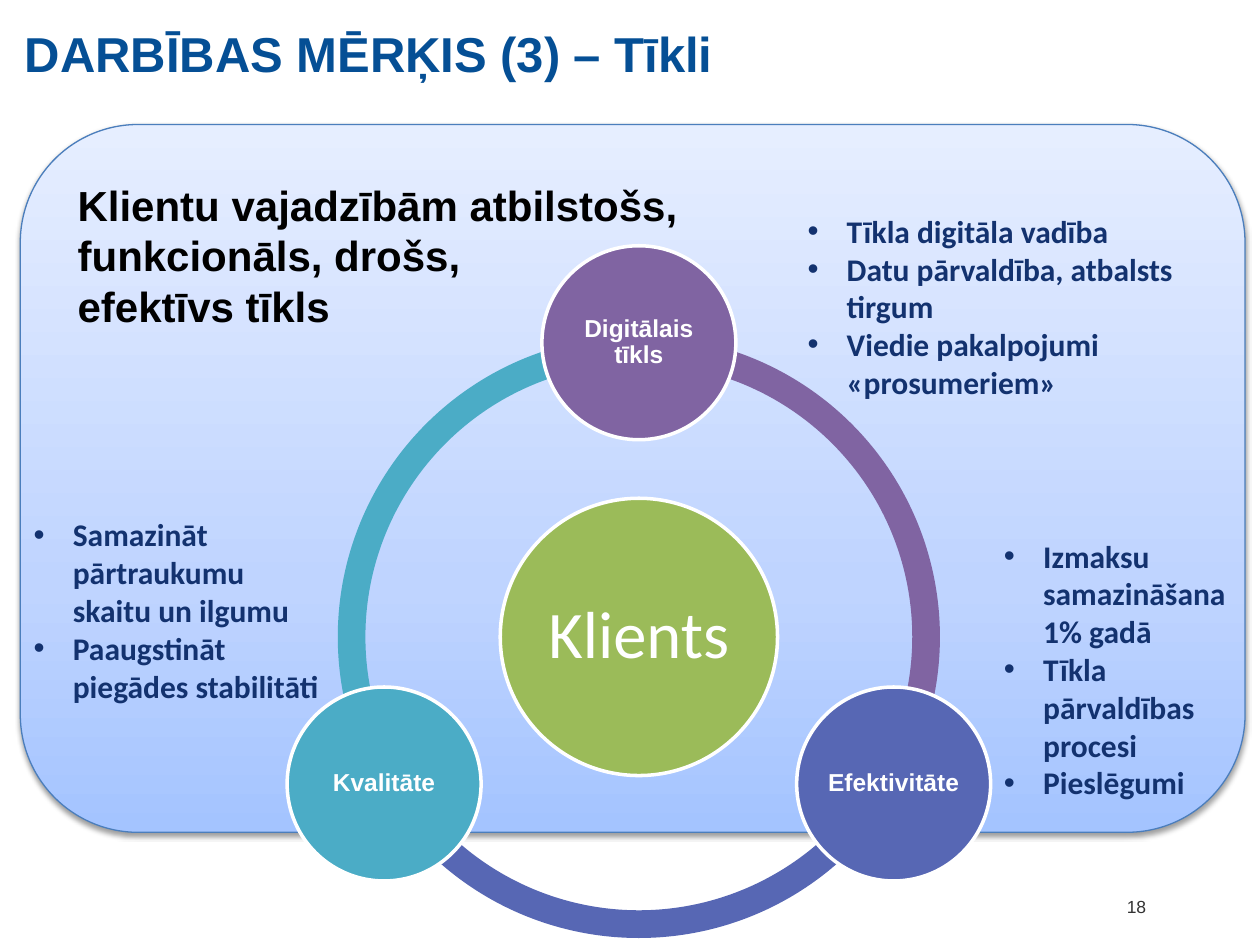
from math import cos, radians, sin

from lxml.etree import SubElement
from pptx import Presentation
from pptx.dml.color import RGBColor
from pptx.enum.shapes import MSO_SHAPE
from pptx.enum.text import MSO_ANCHOR, PP_ALIGN
from pptx.oxml.ns import qn
from pptx.util import Cm, Pt

COLORS = {
    "title": "054F95", "black": "000000", "white": "FFFFFF", "gray": "333333",
    "navy": "13326F", "edge": "4B7EBC", "green": "9BBB59",
    "teal": "4BACC6", "blue": "5767B4", "purple": "8064A2",
}
GRADE = [(0, "A4C4FF"), (35, "BFD4FF"), (100, "E6EEFF")]

TITLE = "DARBĪBAS MĒRĶIS (3) – Tīkli"
GOAL = ["Klientu vajadzībām atbilstošs,", "funkcionāls, drošs,", "efektīvs tīkls"]
PAGE = "18"
HUB = "Klients"
# Label, colour, angle of the node; each arc runs on to the next node
NODES = [
    ("Kvalitāte", "teal", 150),
    ("Efektivitāte", "blue", 30),
    ("Digitālais tīkls", "purple", 270),
]
# Left, top, width, height in cm, then the bullets
LISTS = [
    ((16.03, 4.14, 9.68, 4.11), ["Tīkla digitāla vadība",
                                 "Datu pārvaldība, atbalsts tirgum",
                                 "Viedie pakalpojumi «prosumeriem»"]),
    ((19.99, 10.69, 5.49, 6.4), ["Izmaksu samazināšana 1% gadā",
                                 "Tīkla pārvaldības procesi",
                                 "Pieslēgumi"]),
    ((0.43, 10.26, 6.38, 4.88), ["Samazināt pārtraukumu skaitu un ilgumu",
                                 "Paaugstināt piegādes stabilitāti"]),
]
MID_X, MID_Y = 12.88, 12.84
RING, ORBIT = 12.14, 5.93
HUB_SIZE, NODE_SIZE = 5.59, 3.91


def rgb(name):
    return RGBColor.from_string(COLORS[name])


def write(shape, lines, size, color, font="Arial", bold=True, align=PP_ALIGN.LEFT,
          anchor=MSO_ANCHOR.TOP, inset=(0, 0, 0, 0), space=None, bullet=False):
    frame = shape.text_frame
    frame.word_wrap = True
    frame.vertical_anchor = anchor
    (frame.margin_left, frame.margin_top,
     frame.margin_right, frame.margin_bottom) = map(Cm, inset)
    for i, line in enumerate(lines):
        para = frame.add_paragraph() if i else frame.paragraphs[0]
        para.alignment = align
        if space:
            para.line_spacing = space
        if bullet:
            props = para._p.get_or_add_pPr()
            props.set("marL", str(Cm(0.79)))
            props.set("indent", str(-Cm(0.79)))
            SubElement(props, qn("a:buFont"), typeface="Arial")
            SubElement(props, qn("a:buChar"), char="•")
        run = para.add_run()
        run.text = line
        run.font.name, run.font.size, run.font.bold = font, Pt(size), bold
        run.font.color.rgb = rgb(color)


def add_text(slide, box, lines, size, color, **style):
    write(slide.shapes.add_textbox(*map(Cm, box)), lines, size, color, **style)


def add_round(slide, kind, x, y, size, color):
    """Add a square-framed shape centred on x, y."""
    shape = slide.shapes.add_shape(
        kind, Cm(x - size / 2), Cm(y - size / 2), Cm(size), Cm(size))
    shape.shadow.inherit = False
    shape.fill.solid()
    shape.fill.fore_color.rgb = rgb(color)
    return shape


def add_disc(slide, x, y, size, color, label, points, inset, **style):
    disc = add_round(slide, MSO_SHAPE.OVAL, x, y, size, color)
    disc.line.color.rgb = rgb("white")
    disc.line.width = Pt(2)
    write(disc, [label], points, "white", align=PP_ALIGN.CENTER,
          anchor=MSO_ANCHOR.MIDDLE, inset=(inset,) * 4, space=0.9, **style)


def add_panel(slide):
    panel = slide.shapes.add_shape(
        MSO_SHAPE.ROUNDED_RECTANGLE, Cm(0.41), Cm(2.51), Cm(24.69), Cm(14.27))
    panel.line.color.rgb = rgb("edge")
    panel.line.width = Pt(0.75)
    panel.fill.gradient()
    panel.fill.gradient_angle = 90
    props = panel._element.spPr
    stops = props.find(".//" + qn("a:gsLst"))
    for old in list(stops):
        stops.remove(old)
    for place, color in GRADE:
        stop = SubElement(stops, qn("a:gs"), pos=str(place * 1000))
        SubElement(stop, qn("a:srgbClr"), val=color)
    panel.shadow.inherit = False
    shade = SubElement(props.find(qn("a:effectLst")), qn("a:outerShdw"),
                       blurRad=str(Pt(3.1)), dist=str(Pt(1.6)),
                       dir="5400000", rotWithShape="0")
    tone = SubElement(shade, qn("a:srgbClr"), val=COLORS["black"])
    SubElement(tone, qn("a:alpha"), val="38000")
    write(panel, GOAL, 24, "black", inset=(0.46, 0.41, 0.46, 0.13))


def add_cycle(slide):
    for _, color, start in NODES:
        arc = add_round(slide, MSO_SHAPE.BLOCK_ARC, MID_X, MID_Y, RING, color)
        arc.line.fill.background()
        # One degree is 60000 units, and adjustments count in 100000
        arc.adjustments[0] = start * 0.6
        arc.adjustments[1] = (start + 120) % 360 * 0.6
        arc.adjustments[2] = 0.046
    add_disc(slide, MID_X, MID_Y, HUB_SIZE, "green", HUB, 38, 0.13,
             font="Calibri", bold=False)
    for label, color, angle in NODES:
        turn = radians(angle)
        add_disc(slide, MID_X + ORBIT * cos(turn), MID_Y + ORBIT * sin(turn),
                 NODE_SIZE, color, label, 14, 0.05)


def main():
    deck = Presentation()
    deck.slide_width, deck.slide_height = Cm(25.4), Cm(19.05)
    slide = deck.slides.add_slide(deck.slide_layouts[6])
    add_panel(slide)
    add_text(slide, (0.5, 0.48, 23.42, 1.42), [TITLE], 28, "title")
    add_text(slide, (21.41, 18.01, 3, 0.51), [PAGE], 10, "gray", bold=False,
             align=PP_ALIGN.CENTER, anchor=MSO_ANCHOR.MIDDLE)
    add_cycle(slide)
    for box, lines in LISTS:
        add_text(slide, box, lines, 18, "navy", font="Calibri",
                 inset=(0.25, 0.13, 0.25, 0.13), bullet=True)
    deck.save("out.pptx")


if __name__ == "__main__":
    main()
